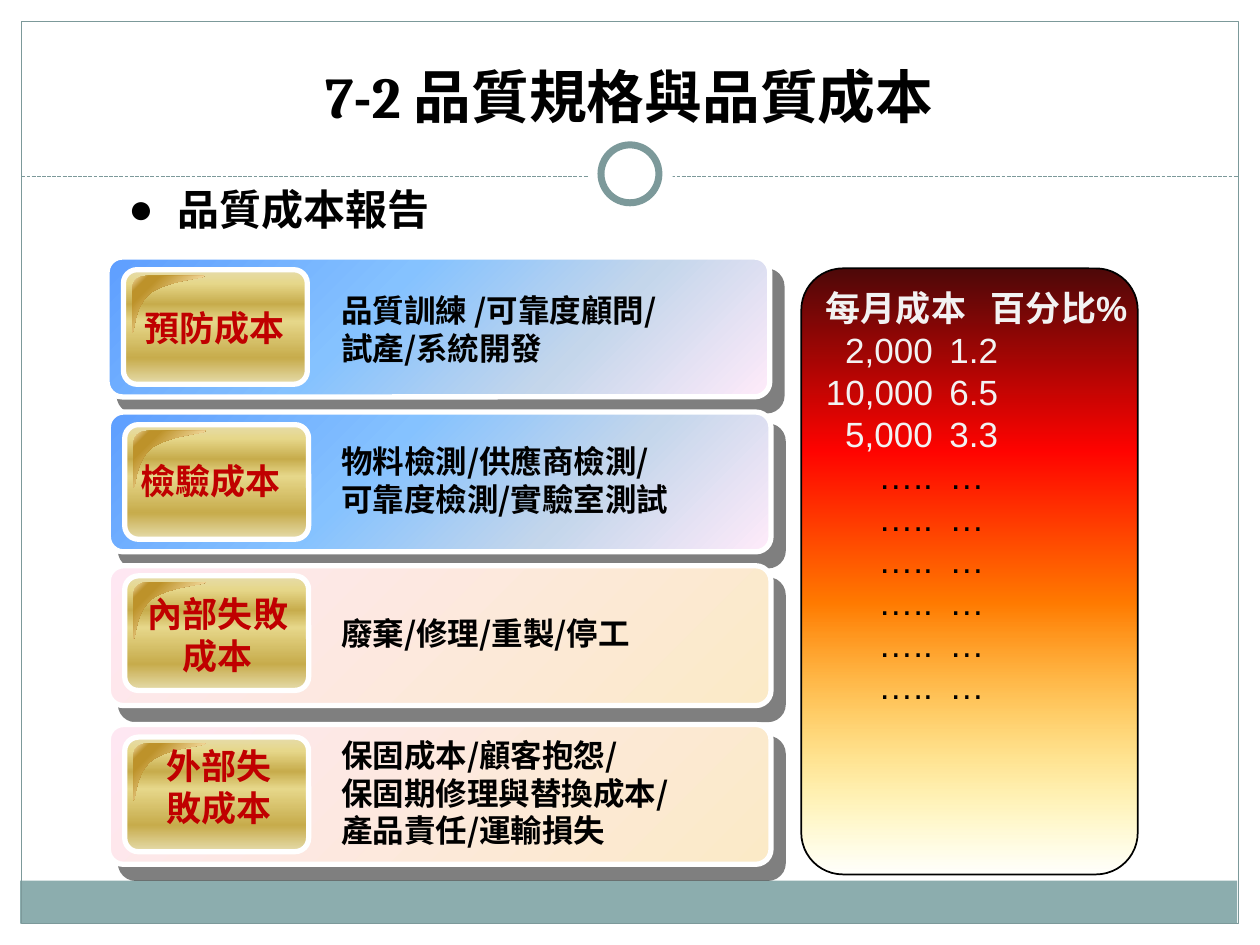
from dataclasses import dataclass

from lxml.etree import SubElement
from pptx import Presentation
from pptx.dml.color import RGBColor
from pptx.enum.dml import MSO_LINE_DASH_STYLE as Dash
from pptx.enum.shapes import MSO_CONNECTOR as Connector, MSO_SHAPE as Shape
from pptx.enum.text import MSO_ANCHOR as Anchor, PP_ALIGN as Align
from pptx.oxml.ns import qn
from pptx.util import Inches, Pt


@dataclass(frozen=True)
class Theme:
    frame: str = "7C999A"
    band: str = "8CADAE"
    white: str = "FFFFFF"
    ink: str = "000000"
    label: str = "C00000"
    pale: str = "F2F2F2"
    serif: str = "Cambria"
    sans: str = "Arial"
    cjk: str = "Noto Sans CJK SC"
    title_size: int = 33
    heading_size: int = 24
    label_size: int = 20
    body_size: int = 18
    # Gradient stops: percent, colour and, where not opaque, alpha percent
    blue: tuple = ((0, "5E9EFF"), (40, "85C2FF"), (70, "C4D6EB"), (100, "FFEBFA"))
    cream: tuple = ((0, "FEE7F2"), (100, "FBEAC7"))
    gold: tuple = ((0, "E6DCAC"), (12, "E6D78A"), (30, "C7AC4C"),
                   (45, "E6D78A"), (77, "C7AC4C"), (100, "E6DCAC"))
    shine: tuple = ((0, "FBE4AE"), (13, "BD922A"), (21, "BD922A"), (63, "FBE4AE"),
                    (67, "BD922A"), (69, "835E17"), (82, "A28949"), (100, "FAE3B7"))
    fire: tuple = ((0, "FFF200", 0), (45, "FF7A00"), (70, "FF0300"), (100, "4D0808"))


THEME = Theme()
TITLE = "7-2 品質規格與品質成本"
HEADING = "品質成本報告"

# Card left and top, plate drop, fill; label and its box; details and their box
CARDS = [
    ((0.85, 2.04), 0.10, THEME.blue, "預防成本", (1.01, 2.38, 1.38, 0.43),
     ["品質訓練 /可靠度顧問/", "試產/系統開發"], (2.61, 2.26, 3.21, 0.69)),
    ((0.86, 3.27), 0.10, THEME.blue, "檢驗成本", (0.98, 3.6, 1.38, 0.43),
     ["物料檢測/供應商檢測/", "可靠度檢測/實驗室測試"], (2.61, 3.46, 3.14, 0.69)),
    ((0.86, 4.49), 0.08, THEME.cream, "內部失敗成本", (1.04, 4.65, 1.38, 0.76),
     ["廢棄/修理/重製/停工"], (2.61, 4.82, 2.56, 0.69)),
    ((0.86, 5.75), 0.10, THEME.cream, "外部失敗成本", (1.1, 5.86, 1.28, 0.76),
     ["保固成本/顧客抱怨/", "保固期修理與替換成本/", "產品責任/運輸損失"],
     (2.61, 5.79, 3.23, 0.99)),
]
COST_HEADER = ("每月成本", "百分比%")
COSTS = [("2,000", "1.2"), ("10,000", "6.5"), ("5,000", "3.3")]
PENDING = [("…..", "…")] * 6

# White margins at the top, left and right
MARGINS = [(0, 0, 10, 1.52), (0, 0, 0.17, 7.5), (9.83, 0, 0.17, 7.5)]

# Corner highlight, from the plate's corner: a line has one point, a curve three
SHINE_START = (0.11, 0)
SHINE_PARTS = [
    [(0.05, 0), (0, 0.04), (0, 0.09)],
    [(0, 0.45)],
    [(0.02, 0.45), (0.01, 0.24), (0.15, 0.13)],
    [(0.30, 0.03), (0.58, 0.02), (0.57, 0)],
]


def color(code):
    return RGBColor.from_string(code)


def set_gradient(shape, stops, angle):
    shape.fill.gradient()
    shape.fill.gradient_angle = -angle % 360
    stop_list = shape._element.spPr.find(qn("a:gradFill")).find(qn("a:gsLst"))
    for old in list(stop_list):
        stop_list.remove(old)
    for percent, code, *alpha in stops:
        stop = SubElement(stop_list, qn("a:gs"), pos=str(percent * 1000))
        tint = SubElement(stop, qn("a:srgbClr"), val=code)
        if alpha:
            SubElement(tint, qn("a:alpha"), val=str(alpha[0] * 1000))


def set_line(shape, code, width):
    shape.line.color.rgb = color(code)
    shape.line.width = Pt(width)


def add_shape(page, kind, at, fill=None, line=None, corner=None):
    shape = page.shapes.add_shape(kind, *map(Inches, at))
    shape.shadow.inherit = False
    if corner is not None:
        shape.adjustments[0] = corner
    if fill is None:
        shape.fill.background()
    elif isinstance(fill, str):
        shape.fill.solid()
        shape.fill.fore_color.rgb = color(fill)
    else:
        set_gradient(shape, *fill)
    if line:
        set_line(shape, *line)
    else:
        shape.line.fill.background()
    return shape


def add_card_shadow(shape):
    effects = shape._element.spPr.find(qn("a:effectLst"))
    shadow = SubElement(effects, qn("a:outerShdw"), dist=str(Pt(10.6)),
                        dir=str(49 * 60000), algn="ctr", rotWithShape="0")
    tint = SubElement(shadow, qn("a:srgbClr"), val=THEME.ink)
    SubElement(tint, qn("a:alpha"), val="50000")


def style(para, size, face, code, bold=True, align=Align.LEFT):
    para.alignment = align
    font = para.font
    font.size, font.name, font.bold = Pt(size), face, bold
    font.color.rgb = color(code)
    props = para._p.get_or_add_pPr().find(qn("a:defRPr"))
    SubElement(props, qn("a:ea"), typeface=THEME.cjk)


def put_before_font(para, tag, **attributes):
    props = para._p.get_or_add_pPr()
    child = SubElement(props, qn(tag), **attributes)
    props.find(qn("a:defRPr")).addprevious(child)
    return child


def add_text(page, at, lines, *look, **options):
    box = page.shapes.add_textbox(*map(Inches, at))
    frame = box.text_frame
    frame.word_wrap = True
    frame.text = "\n".join(lines)
    for para in frame.paragraphs:
        style(para, *look, **options)
    return frame


def add_shine(page, left, top):
    """Draw the highlight through all its points, then bend each triple into a curve."""
    def place(point):
        return Inches(left + point[0]), Inches(top + point[1])

    builder = page.shapes.build_freeform(*place(SHINE_START))
    builder.add_line_segments([place(point) for part in SHINE_PARTS for point in part])
    shine = builder.convert_to_shape()
    outline = next(shine._element.iter(qn("a:path")))
    lines = iter(outline.findall(qn("a:lnTo")))
    for part in SHINE_PARTS:
        segments = [next(lines) for _ in part]
        if len(part) == 3:
            curve = SubElement(outline, qn("a:cubicBezTo"))
            segments[0].addprevious(curve)
            for segment in segments:
                curve.append(segment[0])
                outline.remove(segment)
    SubElement(outline, qn("a:close"))
    shine.shadow.inherit = False
    set_gradient(shine, THEME.shine, 45)
    shine.line.fill.background()


def add_frame(page):
    for margin in MARGINS:
        add_shape(page, Shape.RECTANGLE, margin, THEME.white)
    add_shape(page, Shape.RECTANGLE, (0.16, 6.99, 9.66, 0.34), THEME.band)
    add_shape(page, Shape.RECTANGLE, (0.17, 0.17, 9.66, 7.16), line=(THEME.frame, 0.75))
    rule = page.shapes.add_connector(Connector.STRAIGHT, *map(Inches, (0.17, 1.4, 9.83, 1.4)))
    set_line(rule, THEME.frame, 0.75)
    rule.line.dash_style = Dash.SQUARE_DOT
    SubElement(rule._element.spPr, qn("a:effectLst"))
    add_shape(page, Shape.OVAL, (4.67, 1.05, 0.67, 0.67), THEME.white)
    add_shape(page, Shape.OVAL, (4.77, 1.15, 0.46, 0.46), THEME.white, (THEME.frame, 4))


def add_card(page, corner, drop, stops, label, label_at, details, details_at):
    left, top = corner
    edge = (THEME.white, 3)
    card = add_shape(page, Shape.ROUNDED_RECTANGLE, (left, top, 5.26, 1.11),
                     (stops, 45), edge, 0.109)
    add_card_shadow(card)
    add_shape(page, Shape.ROUNDED_RECTANGLE, (left + 0.13, top + drop, 1.46, 0.91),
              (THEME.gold, 90), edge, 0.119)
    add_shine(page, left + 0.2, top + drop + 0.05)
    add_text(page, label_at, [label], THEME.label_size, THEME.sans, THEME.label,
             align=Align.CENTER)
    add_text(page, details_at, details, THEME.body_size, THEME.cjk, THEME.ink)


def add_cost_panel(page):
    panel = add_shape(page, Shape.ROUNDED_RECTANGLE, (6.36, 2.13, 2.67, 4.81),
                      (THEME.fire, 270), (THEME.ink, 1), 0.124)
    frame = panel.text_frame
    frame.word_wrap = False
    frame.vertical_anchor = Anchor.TOP
    rows = ["\t".join(COST_HEADER)] + [f"\t{cost}\t{share}" for cost, share in COSTS + PENDING]
    frame.text = "\n".join(rows)
    for index, para in enumerate(frame.paragraphs):
        code = THEME.pale if index <= len(COSTS) else THEME.ink
        style(para, THEME.label_size, THEME.sans, code, bold=index == 0)
        tabs = put_before_font(para, "a:tabLst")
        for place, side in [(0.85, "r"), (0.98, "l")] if index else [(1.31, "l")]:
            SubElement(tabs, qn("a:tab"), pos=str(Inches(place)), algn=side)


def add_heading(page):
    para = add_text(page, (0.92, 1.41, 3.78, 0.5), [HEADING],
                    THEME.heading_size, THEME.cjk, THEME.ink).paragraphs[0]
    put_before_font(para, "a:buFont", typeface=THEME.sans)
    put_before_font(para, "a:buChar", char="●")
    props = para._p.get_or_add_pPr()
    props.set("marL", str(Inches(0.39)))
    props.set("indent", str(-Inches(0.39)))


def set_title(page):
    """Fill the title and bring it in front of the white margin."""
    title = page.shapes.title
    title.left, title.top, title.width, title.height = map(Inches, (0.33, 0.25, 9.33, 0.83))
    title.text_frame.text = TITLE
    title.text_frame.vertical_anchor = Anchor.BOTTOM
    style(title.text_frame.paragraphs[0], THEME.title_size, THEME.serif, THEME.ink,
          align=Align.CENTER)
    page.shapes._spTree.append(title._element)


def main():
    deck = Presentation()
    deck.slide_width, deck.slide_height = Inches(10), Inches(7.5)
    page = deck.slides.add_slide(deck.slide_layouts[5])
    add_frame(page)
    for card in CARDS:
        add_card(page, *card)
    add_cost_panel(page)
    add_heading(page)
    set_title(page)
    deck.save("out.pptx")


if __name__ == "__main__":
    main()
